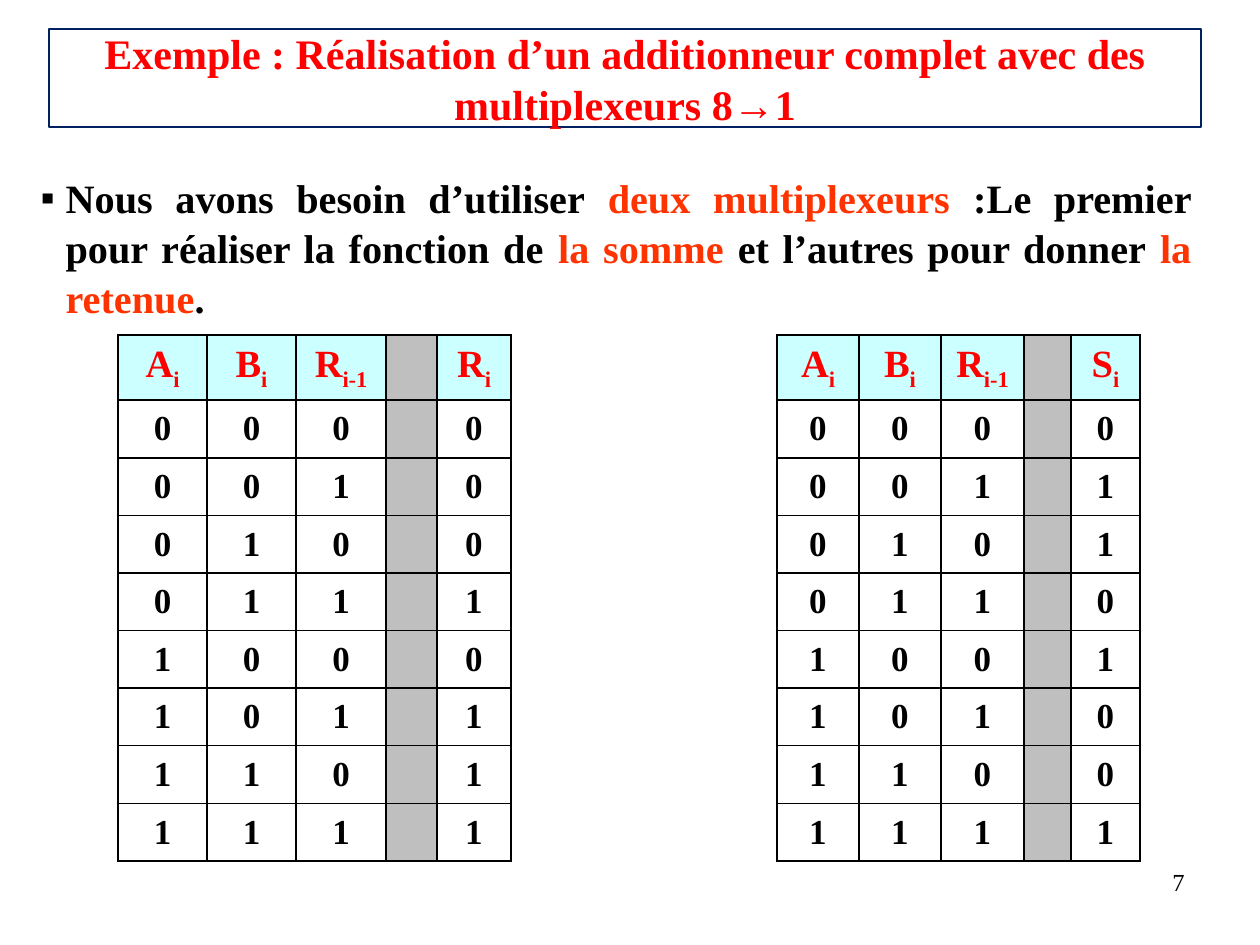
import itertools
import pptx
import pptx.util
import pptx.dml.color
import pptx.enum.text
import pptx.oxml
import pptx.oxml.ns

RGB = pptx.dml.color.RGBColor
ALIGN = pptx.enum.text.PP_ALIGN
ANCHOR = pptx.enum.text.MSO_ANCHOR
AUTO = pptx.enum.text.MSO_AUTO_SIZE

RED = RGB(0xFF, 0x00, 0x00)
ORANGE = RGB(0xFF, 0x33, 0x00)
BLACK = RGB(0x00, 0x00, 0x00)
WHITE = RGB(0xFF, 0xFF, 0xFF)
NAVY = RGB(0x00, 0x20, 0x60)
CYAN = RGB(0xCC, 0xFF, 0xFF)
GREY = RGB(0xBF, 0xBF, 0xBF)
FONT = "Times New Roman"

TITLE = "Exemple : Réalisation d’un additionneur complet avec des multiplexeurs 8→1"
BODY = [
    ("Nous avons besoin d’utiliser ", BLACK),
    ("deux multiplexeurs", ORANGE),
    (" :Le premier pour réaliser la fonction de ", BLACK),
    ("la somme", ORANGE),
    (" et l’autres pour donner ", BLACK),
    ("la retenue", ORANGE),
    (".", BLACK),
]
PAGE = "7"
INPUTS = [("A", "i"), ("B", "i"), ("R", "i-1")]
TRUTH_TABLES = [
    {"output": ("R", "i"), "values": "00010111", "left": 118, "cols": [89, 89, 90, 51, 74]},
    {"output": ("S", "i"), "values": "01101001", "left": 777, "cols": [82, 82, 83, 47, 69]},
]
TABLE_TOP, HEAD_H, ROWS_H = 335, 61, 461
GAP_COL = 3
HANGING = 48


def px(n):
    return pptx.util.Emu(round(n * 914400 / 126))


def place(sp, *box):
    for name, n in zip(("left", "top", "width", "height"), box):
        setattr(sp, name, px(n))


def add_run(p, text, size, color, bold=True, baseline=None):
    r = p.add_run()
    r.text = text
    fmt = {"name": FONT, "size": pptx.util.Pt(size), "bold": bold}
    for name, value in fmt.items():
        setattr(r.font, name, value)
    r.font.color.rgb = color
    if baseline:
        r.font._element.set("baseline", str(baseline))


def indent(p, n):
    pPr = p._p.get_or_add_pPr()
    pPr.set("marL", str(px(n)))
    pPr.set("indent", str(-px(n)))
    return pPr


def format_cell(cell, fill):
    cell.fill.solid()
    cell.fill.fore_color.rgb = fill
    cell.vertical_anchor = ANCHOR.MIDDLE
    tcPr = cell._tc.get_or_add_tcPr()
    for i, side in enumerate("LRTB"):
        tcPr.insert(i, pptx.oxml.parse_xml(
            f'<a:ln{side} {pptx.oxml.ns.nsdecls("a")} w="12700"><a:solidFill>'
            f'<a:srgbClr val="{BLACK}"/></a:solidFill></a:ln{side}>'))


def add_truth_table(slide, data):
    head = INPUTS + [None, data["output"]]
    rows = [[*bits, None, out]
            for bits, out in zip(itertools.product("01", repeat=3), data["values"])]
    gf = slide.shapes.add_table(len(rows) + 1, len(head), px(data["left"]), px(TABLE_TOP),
                                px(sum(data["cols"])), px(HEAD_H + ROWS_H))
    table = gf.table
    table.first_row = table.horz_banding = False
    for col, w in zip(table.columns, data["cols"]):
        col.width = px(w)
    for i, row in enumerate(table.rows):
        row.height = px(ROWS_H / len(rows) if i else HEAD_H)
    for i, row in enumerate([head] + rows):
        for j, value in enumerate(row):
            cell = table.cell(i, j)
            format_cell(cell, GREY if j == GAP_COL else WHITE if i else CYAN)
            if value is None:
                continue
            p = cell.text_frame.paragraphs[0]
            p.alignment = ALIGN.CENTER
            indent(p, HANGING)
            if i:
                add_run(p, value, 20, BLACK)
            else:
                add_run(p, value[0], 22, RED)
                add_run(p, value[1], 22, RED, baseline=-25000)


prs = pptx.Presentation()
prs.slide_width, prs.slide_height = px(1260), px(945)
slide = prs.slides.add_slide(prs.slide_layouts[1])
title, body = slide.placeholders

place(title, 49, 29, 1152, 98)
title.fill.solid()
title.fill.fore_color.rgb = WHITE
title.line.color.rgb = NAVY
title.line.width = pptx.util.Pt(0.75)
tf = title.text_frame
tf.auto_size = AUTO.NONE
tf.vertical_anchor = ANCHOR.MIDDLE
p = tf.paragraphs[0]
p.alignment = ALIGN.CENTER
add_run(p, TITLE, 24, RED)

place(body, 28, 165, 1176, 159)
body.fill.solid()
body.fill.fore_color.rgb = WHITE
tf = body.text_frame
tf.auto_size = AUTO.SHAPE_TO_FIT_TEXT
p = tf.paragraphs[0]
for name, value in {"alignment": ALIGN.JUSTIFY, "line_spacing": 1.04,
                    "space_before": pptx.util.Pt(0)}.items():
    setattr(p, name, value)
indent(p, 25).append(pptx.oxml.parse_xml(
    f'<a:buChar {pptx.oxml.ns.nsdecls("a")} char="▪"/>'))
for text, color in BODY:
    add_run(p, text, 23, color)

for data in TRUTH_TABLES:
    add_truth_table(slide, data)

sp = slide.shapes.add_textbox(px(903), px(861), px(294), px(66))
sp.text_frame.word_wrap = True
p = sp.text_frame.paragraphs[0]
p.alignment = ALIGN.RIGHT
add_run(p, PAGE, 14, BLACK, bold=False)

prs.save("out.pptx")
